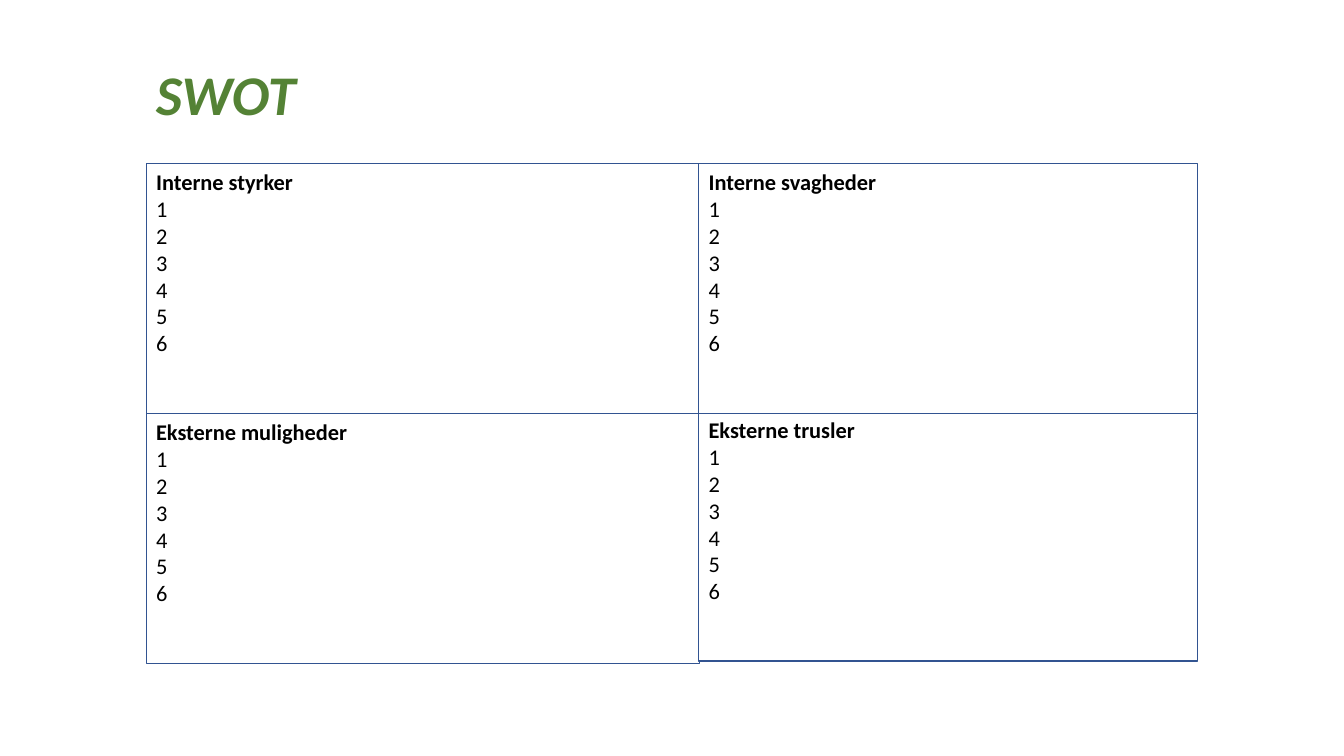
"""Build a SWOT slide with four titled boxes."""
import pptx
import pptx.util
import pptx.dml.color
import pptx.enum.shapes
import pptx.enum.text

Inches = pptx.util.Inches
Pt = pptx.util.Pt
Color = pptx.dml.color.RGBColor.from_string

TITLE = "SWOT"
ITEMS = ["1", "2", "3", "4", "5", "6"]
BOXES = [
    ("Eksterne muligheder", 0, 4.1),
    ("Eksterne trusler", 1, 4.08),
    ("Interne styrker", 0, 1.62),
    ("Interne svagheder", 1, 1.62),
]
COLUMNS = [(1.45, 5.49), (6.93, 4.95)]
HEIGHT = 2.48

THEME = {
    "font": "Calibri",
    "title": "548235",
    "text": "000000",
    "fill": "FFFFFF",
    "line": "325491",
    "title_size": 40,
    "text_size": 16,
}


def style(para, size, color, bold=False, italic=False):
    """Set the font and left alignment of a paragraph."""
    para.alignment = pptx.enum.text.PP_ALIGN.LEFT
    font = para.font
    font.name = THEME["font"]
    font.size = Pt(THEME[size])
    font.color.rgb = Color(THEME[color])
    font.bold = bold
    font.italic = italic


def add_box(slide, head, column, top):
    """Draw one box with its heading and numbered lines."""
    left, width = COLUMNS[column]
    box = slide.shapes.add_shape(
        pptx.enum.shapes.MSO_SHAPE.RECTANGLE,
        Inches(left), Inches(top), Inches(width), Inches(HEIGHT))
    box.shadow.inherit = False
    box.fill.solid()
    box.fill.fore_color.rgb = Color(THEME["fill"])
    box.line.color.rgb = Color(THEME["line"])
    box.line.width = Pt(1)
    frame = box.text_frame
    frame.word_wrap = True
    frame.vertical_anchor = pptx.enum.text.MSO_ANCHOR.TOP
    frame.text = "\n".join([head] + ITEMS)
    for row, para in enumerate(frame.paragraphs):
        style(para, "text_size", "text", bold=row == 0)


def add_title(slide):
    """Write the slide title."""
    box = slide.shapes.add_textbox(
        Inches(1.45), Inches(0.54), Inches(2.04), Inches(0.77))
    frame = box.text_frame
    frame.word_wrap = True
    frame.auto_size = pptx.enum.text.MSO_AUTO_SIZE.SHAPE_TO_FIT_TEXT
    frame.text = TITLE
    style(frame.paragraphs[0], "title_size", "title", bold=True, italic=True)


def main():
    """Build and save the deck."""
    deck = pptx.Presentation()
    deck.slide_width = Inches(13.33)
    deck.slide_height = Inches(7.5)
    slide = deck.slides.add_slide(deck.slide_layouts[6])
    for head, column, top in BOXES:
        add_box(slide, head, column, top)
    add_title(slide)
    deck.save("out.pptx")


if __name__ == "__main__":
    main()
